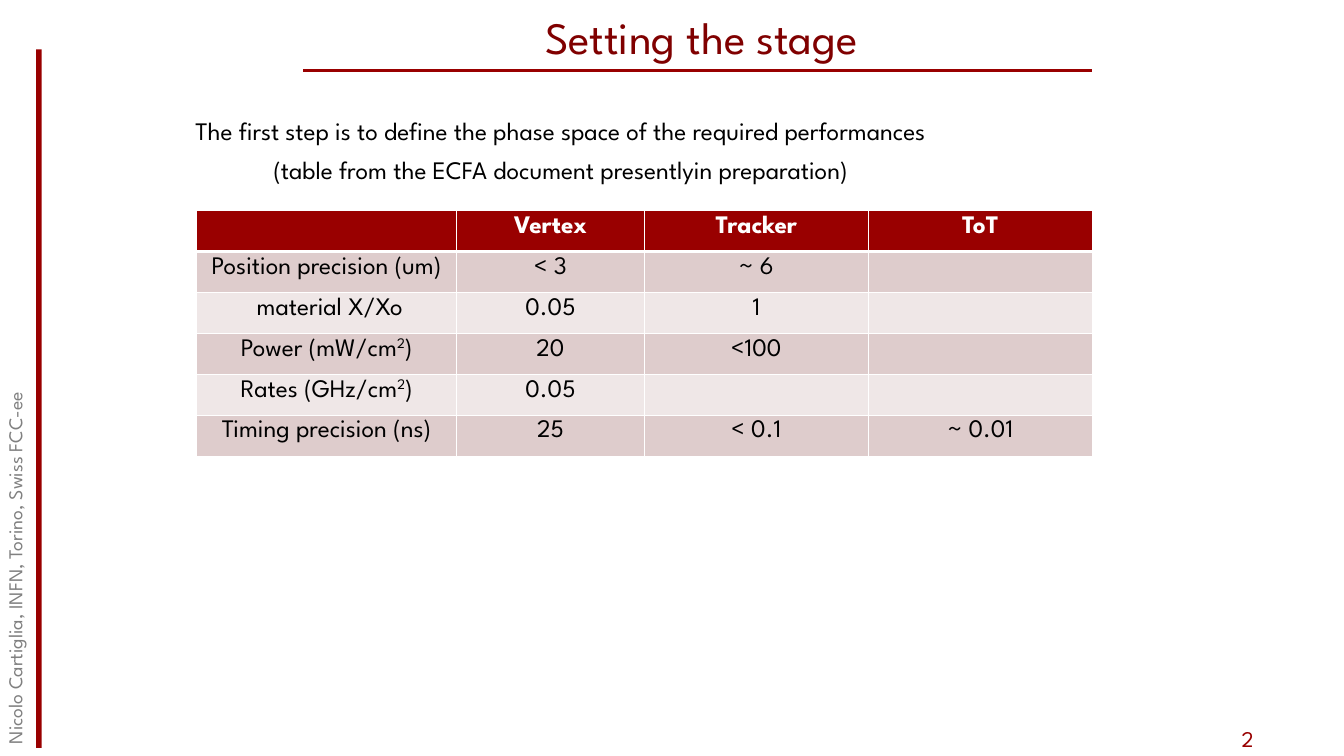
import pptx
import pptx.dml.color
import pptx.enum.shapes
import pptx.enum.text
import pptx.oxml
import pptx.oxml.ns
import pptx.util

Pt = pptx.util.Pt
ALIGN = pptx.enum.text.PP_ALIGN
ANCHOR = pptx.enum.text.MSO_ANCHOR

FONT = "League Spartan"
RED, TITLE_RED, GREY = "990000", "800000", "808080"
BLACK, WHITE = "000000", "FFFFFF"
BAND_FILLS = ["DECCCC", "EFE7E7"]

COLUMN_WIDTHS = [185.5, 134.2, 160, 160]
ROW_HEIGHT = 29.25
ROWS = [
    ["", "Vertex", "Tracker", "ToT"],
    ["Position precision (um)", "< 3", "~ 6", ""],
    [" material X/Xo", "0.05", "1", ""],
    ["Power (mW/cm^2^)", "20", "<100", ""],
    ["Rates (GHz/cm^2^)", "0.05", "", ""],
    ["Timing precision (ns)", "25", "< 0.1", "~ 0.01"],
]


def rgb(colour):
    return pptx.dml.color.RGBColor.from_string(colour)


def write(para, text, size, colour, bold=False, align=ALIGN.LEFT):
    """Add text to a paragraph; parts between carets become superscript."""
    para.alignment = align
    for index, part in enumerate(text.split("^")):
        if not part:
            continue
        span = para.add_run()
        span.text = part
        span.font.name = FONT
        span.font.size = Pt(size)
        span.font.bold = bold
        span.font.color.rgb = rgb(colour)
        if index % 2:
            span._r.get_or_add_rPr().set("baseline", "30000")


def add_text(page, place, lines, size, colour, aligns=(ALIGN.LEFT,), wrap=True,
             anchor=ANCHOR.TOP, spacing=None):
    box = page.shapes.add_textbox(*map(Pt, place))
    frame = box.text_frame
    frame.word_wrap = wrap
    frame.vertical_anchor = anchor
    for index, (line, align) in enumerate(zip(lines, aligns)):
        para = frame.add_paragraph() if index else frame.paragraphs[0]
        para.line_spacing = spacing
        write(para, line, size, colour, align=align)
    return box


def add_bar(page, place, colour):
    bar = page.shapes.add_shape(pptx.enum.shapes.MSO_SHAPE.RECTANGLE, *map(Pt, place))
    bar.shadow.inherit = False
    bar.fill.solid()
    bar.fill.fore_color.rgb = rgb(colour)
    bar.line.fill.background()


def add_line(page, ends, colour, width):
    line = page.shapes.add_connector(
        pptx.enum.shapes.MSO_CONNECTOR.STRAIGHT, *map(Pt, ends))
    line.line.color.rgb = rgb(colour)
    line.line.width = Pt(width)
    line._element.spPr.append(pptx.oxml.parse_xml(
        f"<a:effectLst {pptx.oxml.ns.nsdecls('a')}/>"))


def set_borders(cell, widths):
    """Draw white borders; widths run left, right, top, bottom."""
    properties = cell._tc.get_or_add_tcPr()
    for index, (side, width) in enumerate(zip("LRTB", widths)):
        properties.insert(index, pptx.oxml.parse_xml(
            f'<a:ln{side} {pptx.oxml.ns.nsdecls("a")} w="{Pt(width)}">'
            f'<a:solidFill><a:srgbClr val="{WHITE}"/></a:solidFill></a:ln{side}>'))


def add_requirements(page, left, top):
    frame = page.shapes.add_table(
        len(ROWS), len(COLUMN_WIDTHS), Pt(left), Pt(top),
        Pt(sum(COLUMN_WIDTHS)), Pt(ROW_HEIGHT * len(ROWS)))
    table = frame.table
    table.horz_banding = False
    for column, width in zip(table.columns, COLUMN_WIDTHS):
        column.width = Pt(width)
    for row_index, texts in enumerate(ROWS):
        header = row_index == 0
        table.rows[row_index].height = Pt(ROW_HEIGHT)
        for column_index, text in enumerate(texts):
            cell = table.cell(row_index, column_index)
            cell.fill.solid()
            fill = RED if header else BAND_FILLS[(row_index - 1) % 2]
            cell.fill.fore_color.rgb = rgb(fill)
            set_borders(cell, [1, 1, 3 if row_index == 1 else 1, 3 if header else 1])
            write(cell.text_frame.paragraphs[0], text, 18,
                  WHITE if header else BLACK, header, ALIGN.CENTER)


def main():
    deck = pptx.Presentation()
    deck.slide_width, deck.slide_height = Pt(960), Pt(540)
    page = deck.slides.add_slide(deck.slide_layouts[6])

    add_bar(page, (25.9, 35.3, 3.8, 499), RED)
    add_line(page, (216.7, 50.4, 779.8, 50.4), RED, 2)
    add_text(page, (879.8, 514.8, 58.3, 25.2), ["2"], 16, RED, anchor=ANCHOR.MIDDLE)
    credit = add_text(page, (-244.1, 268.6, 512.6, 27.4),
                      ["Nicolo Cartiglia, INFN, Torino, Swiss FCC-ee"], 14, GREY)
    credit.rotation = 270
    add_text(page, (36, 3.6, 930.2, 50.4), ["Setting the stage"], 32,
             TITLE_RED, [ALIGN.CENTER])
    intro = add_text(
        page, (132.5, 72, 640.8, 61.2),
        ["The first step is to define the phase space of the required performances",
         "(table from the ECFA document presentlyin preparation)"],
        18, BLACK, [ALIGN.LEFT, ALIGN.CENTER], wrap=False, spacing=1.3)
    intro.text_frame.auto_size = pptx.enum.text.MSO_AUTO_SIZE.SHAPE_TO_FIT_TEXT
    add_requirements(page, 140.6, 150.5)
    deck.save("out.pptx")


if __name__ == "__main__":
    main()
